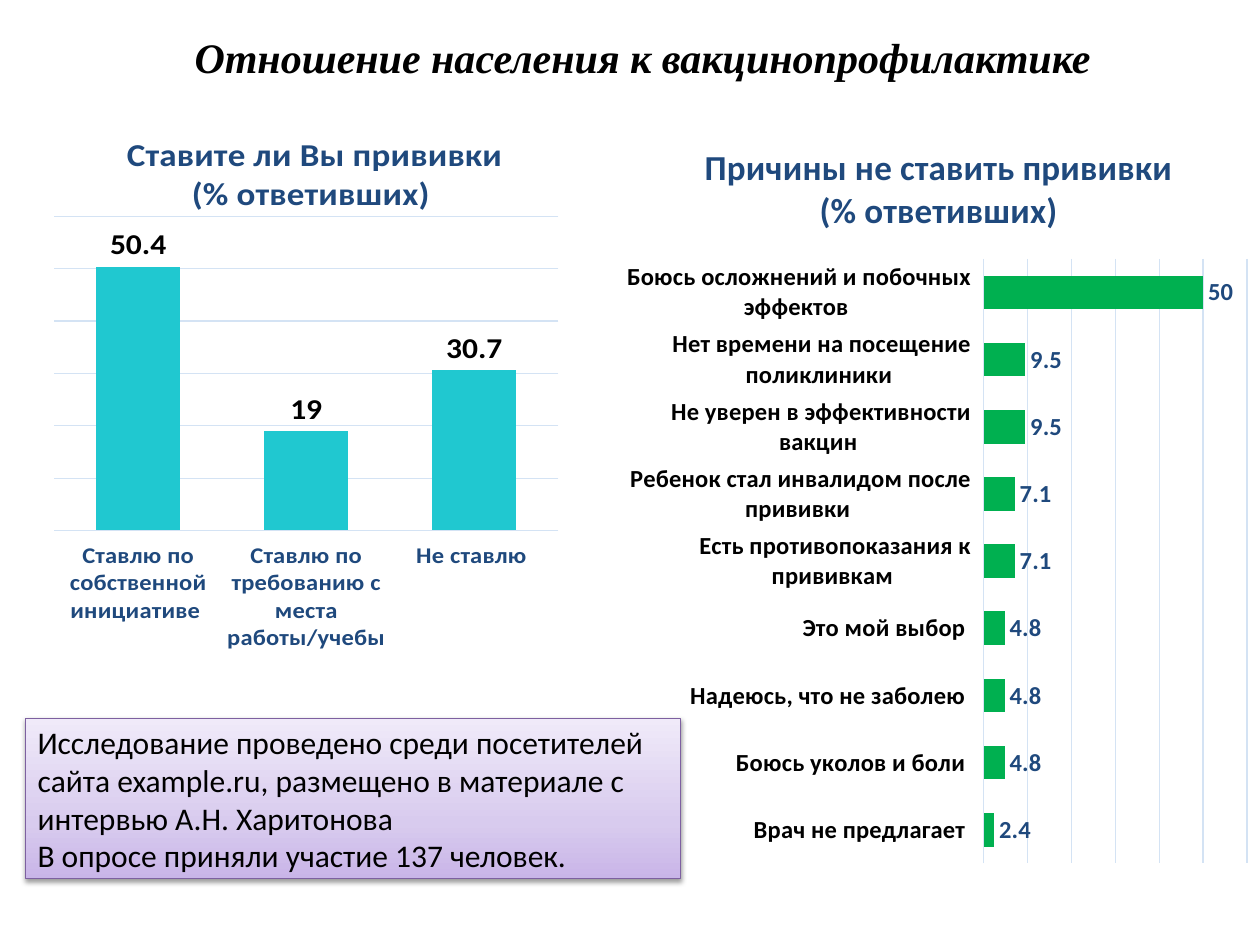
from lxml import etree
from pptx import Presentation
from pptx.chart.data import CategoryChartData
from pptx.dml.color import RGBColor
from pptx.enum.chart import XL_CHART_TYPE, XL_LABEL_POSITION, XL_TICK_LABEL_POSITION, XL_TICK_MARK
from pptx.enum.shapes import MSO_SHAPE
from pptx.enum.text import MSO_ANCHOR, MSO_AUTO_SIZE, PP_ALIGN
from pptx.oxml import parse_xml
from pptx.util import Inches, Pt

COLUMN, BAR = XL_CHART_TYPE.COLUMN_CLUSTERED, XL_CHART_TYPE.BAR_CLUSTERED
OUTSIDE, LOW, NONE = XL_LABEL_POSITION.OUTSIDE_END, XL_TICK_LABEL_POSITION.LOW, XL_TICK_MARK.NONE
RECT, MIDDLE, GROW = MSO_SHAPE.RECTANGLE, MSO_ANCHOR.MIDDLE, MSO_AUTO_SIZE.SHAPE_TO_FIT_TEXT
LEFT, CENTER = PP_ALIGN.LEFT, PP_ALIGN.CENTER

WIDE, HIGH = 10, 7.5
COLORS = {
    "ink": "000000", "navy": "1F497D", "grid": "D4E3F4", "teal": "20C8D0",
    "green": "00B050", "edge": "7D60A0", "deep": "C9B5E8", "mid": "D8CBEE", "pale": "F0EAF9",
}
A_NS = "http://schemas.openxmlformats.org/drawingml/2006/main"
C_NS = "http://schemas.openxmlformats.org/drawingml/2006/chart"

HABITS = {
    "Ставлю по собственной инициативе ": 50.4,
    "Ставлю по требованию с места работы/учебы ": 19,
    "Не ставлю ": 30.7,
}
CAUSES = {
    "Врач не предлагает ": 2.4,
    "Боюсь уколов и боли ": 4.8,
    "Надеюсь, что не заболею ": 4.8,
    "Это мой выбор ": 4.8,
    "Есть противопоказания к прививкам ": 7.1,
    "Ребенок стал инвалидом после прививки ": 7.1,
    "Не уверен в эффективности вакцин ": 9.5,
    "Нет времени на посещение поликлиники ": 9.5,
    "Боюсь осложнений и побочных эффектов ": 50,
}


def rgb(name):
    return RGBColor.from_string(COLORS[name])


def style(font, size, color="ink", face="Calibri", bold=False, italic=False):
    font.size, font.name, font.bold, font.italic = Pt(size), face, bold, italic
    font.color.rgb = rgb(color)


def write(frame, text, align=LEFT, **form):
    """Fill a text frame, one paragraph per line of text."""
    for i, line in enumerate(text.split("\n")):
        para = frame.add_paragraph() if i else frame.paragraphs[0]
        para.alignment = align
        run = para.add_run()
        run.text = line
        style(run.font, **form)


def rule(line, color):
    line.color.rgb = rgb(color)
    line.width = Pt(0.75)


def fade(shape, stops, angle):
    """Give a shape a linear gradient; stops are (percent, colour name)."""
    marks = "".join(
        f'<a:gs pos="{at * 1000}"><a:srgbClr val="{COLORS[name]}"/></a:gs>' for at, name in stops)
    shape.fill.background()
    old = shape._element.spPr.find(f"{{{A_NS}}}noFill")
    old.getparent().replace(old, parse_xml(
        f'<a:gradFill xmlns:a="{A_NS}" rotWithShape="1"><a:gsLst>{marks}</a:gsLst>'
        f'<a:lin ang="{angle * 60000}" scaled="0"/></a:gradFill>'))


def shade(shape, blur, dist, angle, alpha):
    shape.shadow.inherit = False
    effects = shape._element.spPr.find(f"{{{A_NS}}}effectLst")
    effects.append(parse_xml(
        f'<a:outerShdw xmlns:a="{A_NS}" blurRad="{Pt(blur)}" dist="{Pt(dist)}" '
        f'dir="{angle * 60000}" rotWithShape="0"><a:srgbClr val="{COLORS["ink"]}">'
        f'<a:alpha val="{alpha * 1000}"/></a:srgbClr></a:outerShdw>'))


def place(chart, plot):
    """Set the inner plot area as shares of the chart: x, y, w, h."""
    area = chart._chartSpace.chart.plotArea
    for old in area.findall(f"{{{C_NS}}}layout"):
        area.remove(old)
    layout = etree.Element(f"{{{C_NS}}}layout")
    manual = etree.SubElement(layout, f"{{{C_NS}}}manualLayout")
    pairs = [("layoutTarget", "inner"), ("xMode", "edge"), ("yMode", "edge"), *zip("xywh", plot)]
    for tag, val in pairs:
        etree.SubElement(manual, f"{{{C_NS}}}{tag}").set("val", str(val))
    area.insert(0, layout)


class Deck:
    def __init__(self):
        self.file = Presentation()
        self.file.slide_width, self.file.slide_height = Inches(WIDE), Inches(HIGH)
        self.slide = self.file.slides.add_slide(self.file.slide_layouts[6])

    def box(self, x, y, w, h):
        """Turn shares of the slide into lengths."""
        return Inches(x * WIDE), Inches(y * HIGH), Inches(w * WIDE), Inches(h * HIGH)

    def title(self, text, *area):
        frame = self.slide.shapes.add_textbox(*self.box(*area)).text_frame
        frame.word_wrap, frame.vertical_anchor = True, MIDDLE
        write(frame, text, CENTER, size=24, face="Times New Roman", bold=True, italic=True)

    def chart(self, kind, title, data, area, plot, fill, names, marks, size, overlap=0):
        table = CategoryChartData()
        table.categories = list(data)
        table.add_series("Series 1", list(data.values()))
        chart = self.slide.shapes.add_chart(kind, *self.box(*area), table).chart
        style(chart.font, 14)
        chart.has_legend = False
        chart.has_title = True
        write(chart.chart_title.text_frame, title, CENTER, size=20, color="navy", bold=True)
        place(chart, plot)

        cats, vals = chart.category_axis, chart.value_axis
        cats.major_tick_mark = cats.minor_tick_mark = NONE
        cats.tick_label_position = LOW
        cats.has_major_gridlines = False
        style(cats.tick_labels.font, 14, names, bold=True)
        rule(cats.format.line, "grid")
        vals.minimum_scale, vals.maximum_scale, vals.major_unit = 0, 60, 10
        vals.has_major_gridlines = True
        rule(vals.major_gridlines.format.line, "grid")
        vals.visible = False

        bars = chart.plots[0]
        bars.gap_width, bars.overlap, bars.vary_by_categories = 100, overlap, False
        paint = bars.series[0].format.fill
        paint.solid()
        paint.fore_color.rgb = rgb(fill)
        bars.has_data_labels = True
        tags = bars.data_labels
        tags.show_value, tags.position = True, OUTSIDE
        style(tags.font, size, marks, bold=True)

    def note(self, text, *area):
        shape = self.slide.shapes.add_shape(RECT, *self.box(*area))
        fade(shape, [(0, "deep"), (35, "mid"), (100, "pale")], 270)
        rule(shape.line, "edge")
        shade(shape, 3.1, 1.6, 90, 38)
        frame = shape.text_frame
        frame.word_wrap, frame.auto_size = True, GROW
        write(frame, text, size=18)


def main():
    deck = Deck()
    deck.title("Отношение населения к вакцинопрофилактике", 0.02, 0, 0.98, 0.12)
    deck.chart(COLUMN, "Ставите ли Вы прививки\n(% ответивших) ", HABITS,
               (0.02, 0.12, 0.46, 0.57), (0.05, 0.21, 0.87, 0.64),
               "teal", names="navy", marks="ink", size=18, overlap=-24)
    deck.chart(BAR, "Причины не ставить прививки (% ответивших)", CAUSES,
               (0.49, 0.12, 0.51, 0.81), (0.57, 0.19, 0.41, 0.79),
               "green", names="ink", marks="navy", size=14)
    deck.note("Исследование проведено среди посетителей сайта example.ru, размещено в материале "
              "с интервью А.Н. Харитонова\nВ опросе приняли участие 137 человек.",
              0.02, 0.76, 0.52, 0.17)
    deck.file.save("out.pptx")


if __name__ == "__main__":
    main()
